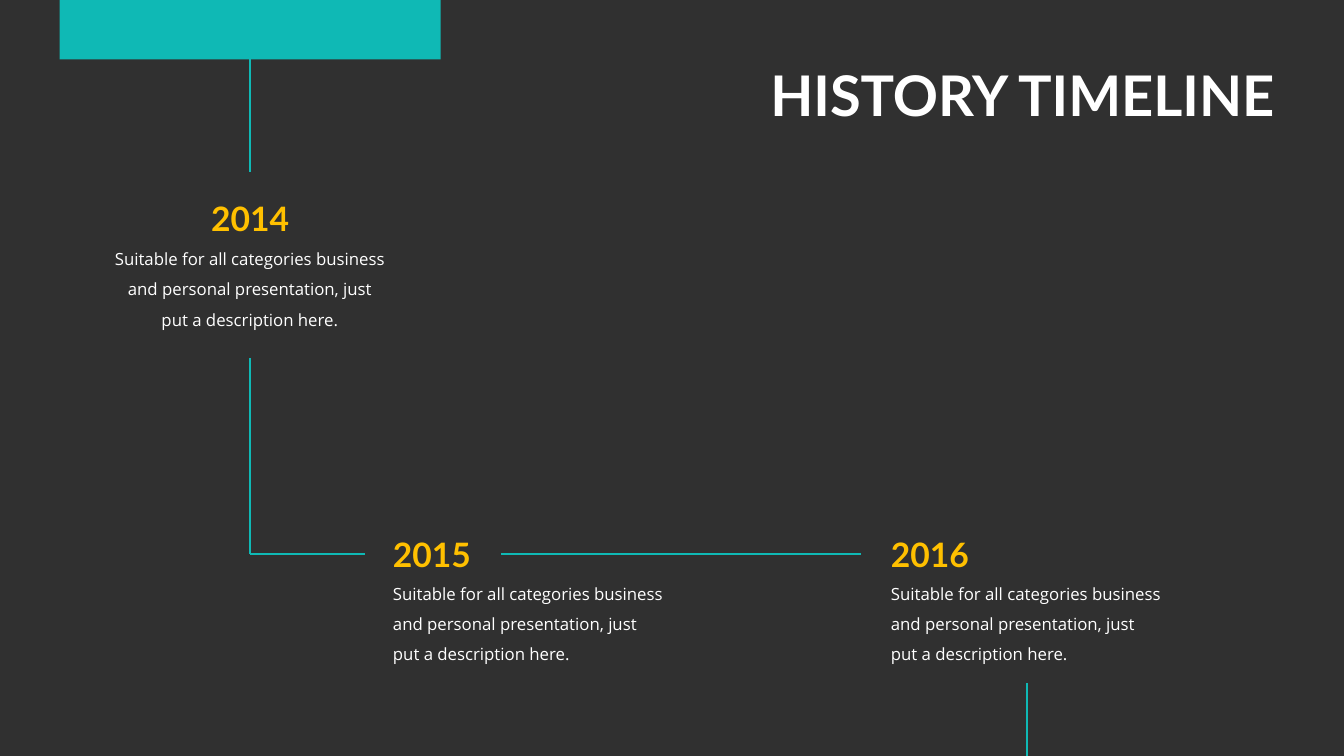
from lxml import etree
from pptx import Presentation
from pptx.dml.color import RGBColor
from pptx.enum.shapes import MSO_CONNECTOR, MSO_SHAPE
from pptx.enum.text import MSO_ANCHOR, MSO_AUTO_SIZE, PP_ALIGN
from pptx.oxml.ns import qn
from pptx.util import Inches, Pt

LEFT, CENTER, RIGHT = PP_ALIGN.LEFT, PP_ALIGN.CENTER, PP_ALIGN.RIGHT
MIDDLE = MSO_ANCHOR.MIDDLE
GROW = MSO_AUTO_SIZE.SHAPE_TO_FIT_TEXT
STRAIGHT = MSO_CONNECTOR.STRAIGHT
RECTANGLE = MSO_SHAPE.RECTANGLE

COLORS = {"dark": "303030", "teal": "0FB9B5", "gold": "FFC000", "white": "FFFFFF"}
HEADING_FONT, BODY_FONT = "Lato", "Open Sans"
DESCRIPTION = ("Suitable for all categories business and personal presentation, "
               "just put a description here.")
YEAR_WIDTH, YEAR_HEIGHT = 7.35, 6.67
BODY_WIDTH, BODY_HEIGHT = 21.75, 13.07
TRUNK_X, TURN_Y = 18.6, 73.33
SECOND_X, THIRD_X = 28.5, 65.55
LOWER_YEAR_Y, LOWER_BODY_Y = 70, 75.2


class TimelineSlide:
    """Draws timeline elements, with lengths in percent of the slide's size."""

    def __init__(self, deck):
        self.deck = deck
        self.page = deck.slides.add_slide(deck.slide_layouts[6])
        self.paint(self.page.background.fill, "dark")

    def color(self, name):
        return RGBColor.from_string(COLORS[name])

    def paint(self, fill, name):
        fill.solid()
        fill.fore_color.rgb = self.color(name)

    def across(self, share):
        return round(self.deck.slide_width * share / 100)

    def down(self, share):
        return round(self.deck.slide_height * share / 100)

    def place(self, left, top, width, height):
        return self.across(left), self.down(top), self.across(width), self.down(height)

    def block(self, *area):
        shape = self.page.shapes.add_shape(RECTANGLE, *self.place(*area))
        shape.shadow.inherit = False
        self.paint(shape.fill, "teal")
        shape.line.fill.background()

    def line(self, *ends):
        connector = self.page.shapes.add_connector(STRAIGHT, *self.place(*ends))
        connector.line.color.rgb = self.color("teal")
        connector.line.width = Pt(1.5)
        etree.SubElement(connector._element.spPr, qn("a:effectLst"))

    def text(self, words, area, size, color, font=HEADING_FONT, align=LEFT,
             bold=True, wrap=True, spacing=1.0):
        box = self.page.shapes.add_textbox(*self.place(*area))
        frame = box.text_frame
        frame.word_wrap = wrap
        frame.auto_size = GROW
        frame.text = words
        para = frame.paragraphs[0]
        para.alignment = align
        para.line_spacing = spacing
        span = para.runs[0]
        span.font.name = font
        span.font.size = Pt(size)
        span.font.bold = bold
        span.font.color.rgb = self.color(color)
        return frame

    def title(self, words, area):
        frame = self.text(words, area, 40, "white", align=RIGHT, spacing=0.9)
        frame.vertical_anchor = MIDDLE
        frame.margin_top = frame.margin_bottom = Inches(0.12)

    def milestone(self, year, x, year_top, body_top, align=LEFT):
        shift = 0.5 if align == CENTER else 0
        year_area = (x - YEAR_WIDTH * shift, year_top, YEAR_WIDTH, YEAR_HEIGHT)
        body_area = (x - BODY_WIDTH * shift, body_top, BODY_WIDTH, BODY_HEIGHT)
        self.text(year, year_area, 24, "gold", align=align, wrap=False)
        self.text(DESCRIPTION, body_area, 12, "white", BODY_FONT, align,
                  bold=False, spacing=1.5)


def main():
    deck = Presentation()
    deck.slide_width, deck.slide_height = Inches(13.33), Inches(7.5)
    slide = TimelineSlide(deck)
    slide.block(4.43, 0, 28.35, 7.87)
    for ends in [
        (TRUNK_X, 7.87, TRUNK_X, 22.8),
        (TRUNK_X, 47.33, TRUNK_X, TURN_Y),
        (TRUNK_X, TURN_Y, 27.15, TURN_Y),
        (37.28, TURN_Y, 64.05, TURN_Y),
        (76.43, 90.4, 76.43, 100),
    ]:
        slide.line(*ends)
    slide.milestone("2014", TRUNK_X, 25.47, 30.93, CENTER)
    slide.milestone("2015", SECOND_X, LOWER_YEAR_Y, LOWER_BODY_Y)
    slide.milestone("2016", THIRD_X, LOWER_YEAR_Y, LOWER_BODY_Y)
    slide.title("HISTORY TIMELINE", (27.9, 7.47, 67.65, 11.2))
    deck.save("out.pptx")


if __name__ == "__main__":
    main()
